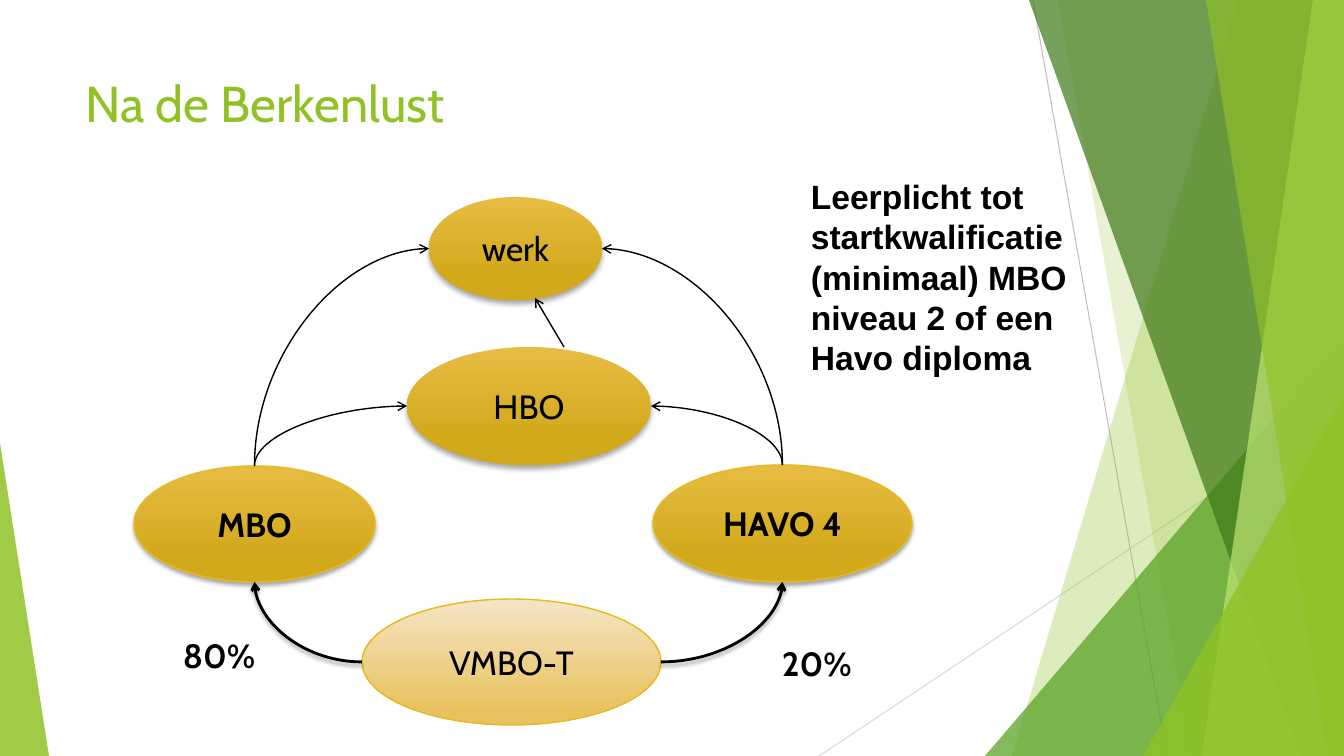
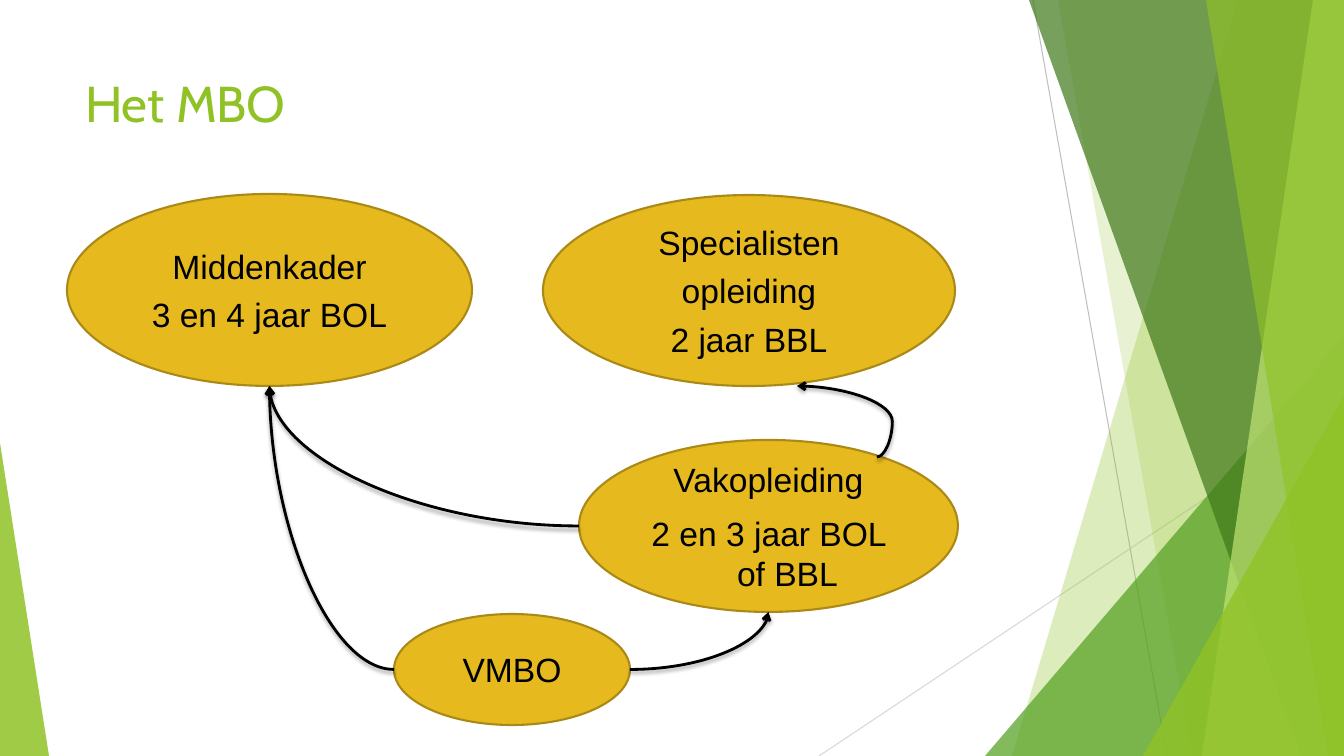
from lxml import etree
from pptx import Presentation
from pptx import util as u
from pptx.dml.color import RGBColor
from pptx.enum import shapes, text
from pptx.oxml.ns import qn

W, H = 1344, 756
GREEN, BLACK, GOLD = "90C226", "000000", "E6B91E"
TITLE_BOX = (75, 67, 948, 146)
TOP, LEFT, BOTTOM, RIGHT = range(4)

# Oval looks: fill is one colour or a list of (position, colour)
AMBER = [(0, "E7BC43"), (0.78, "D2A91B")]
RAISED = dict(fill=AMBER, shadow=(4, 3))
OUTLINED = dict(fill=AMBER, line=(GOLD, 1), shadow=(3, 2))
PALE = dict(fill=[(0, "F5E5C5"), (0.88, "E9C260")], line=(GOLD, 1))
FLAT = dict(fill=GOLD, line=("AA8916", 1.5))

# Arrow looks
THICK = dict(width=2, tip="tailEnd", shadow=(3, 2))
THIN_BACK = dict(width=1, tip="headEnd")
THIN = dict(width=1, tip="tailEnd")

# Side decoration, back to front
HAIRLINES = [(1033, 0, 1167, H, "BFBFBF"), (W, 406, 819, H, "D9D9D9")]
DECOR = [  # bands: (top x, bottom x); wedges: (box, apex)
    ((1238, 1012), GREEN, 30),
    ((1058, 1192), GREEN, 20),
    ((985, 336, 359, 420, 1), "54A021", 72),
    ((1029, 1301), "3F7819", 70),
    ((1313, 1202), "C0E474", 70),
    ((1206, 1328), GREEN, 65),
    ((1143, 396, 201, 360, 1), GREEN, 80),
    ((0, 443, 49, 313, 0), GREEN, 85),
]


def px(*values):
    return [u.Emu(round(v * 914400 / 100.8)) for v in values]


def rgb(color):
    return RGBColor.from_string(color)


def set_all(obj, **values):
    for name, value in values.items():
        setattr(obj, name, value)


def sub(parent, tag, **attrs):
    return etree.SubElement(parent, qn(tag), {k: str(v) for k, v in attrs.items()})


def set_alpha(color_el, percent):
    sub(color_el, "a:alpha", val=percent * 1000)


def set_shadow(sp, shadow):
    """Replace the theme shadow by none, or by a (blur, distance) one."""
    spPr = sp.element.spPr
    effects = spPr.find(qn("a:effectLst"))
    if effects is None:
        effects = sub(spPr, "a:effectLst")
    if shadow:
        blur, dist = (u.Pt(v) for v in shadow)
        outer = sub(effects, "a:outerShdw", blurRad=blur, dist=dist,
                    dir=5400000, rotWithShape=0)
        set_alpha(sub(outer, "a:srgbClr", val=BLACK), 35)


def set_paint(sp, fill, line=None, shadow=None):
    if isinstance(fill, str):
        sp.fill.solid()
        sp.fill.fore_color.rgb = rgb(fill)
    else:
        sp.fill.gradient()
        sp.fill.gradient_angle = 270
        for stop, (position, color) in zip(sp.fill.gradient_stops, fill):
            stop.position = position
            stop.color.rgb = rgb(color)
    if line:
        sp.line.color.rgb, sp.line.width = rgb(line[0]), u.Pt(line[1])
    else:
        sp.line.fill.background()
    sp.shadow.inherit = False
    set_shadow(sp, shadow)


def write(sp, lines, font, size=24, color=BLACK, bold=False, align="LEFT",
          anchor="TOP", before=None):
    """Fill a shape with paragraphs; a space before also brings a hanging indent."""
    tf = sp.text_frame
    set_all(tf, word_wrap=True, auto_size=text.MSO_AUTO_SIZE.NONE,
            vertical_anchor=text.MSO_ANCHOR[anchor])
    for i, line in enumerate(lines):
        p = tf.add_paragraph() if i else tf.paragraphs[0]
        p.alignment = text.PP_ALIGN[align]
        if before is not None:
            p.space_before = u.Pt(before)
            indent = px(38)[0]
            pPr = p._p.get_or_add_pPr()
            pPr.set("marL", str(indent))
            pPr.set("indent", str(-indent))
        r = p.add_run()
        r.text = line
        set_all(r.font, name=font, size=u.Pt(size), bold=bold)
        r.font.color.rgb = rgb(color)


def add_decor(s):
    """Draw hairlines, bands and wedges, then hand them to the slide's layout."""
    drawn = []
    for *ends, color in HAIRLINES:
        c = s.shapes.add_connector(shapes.MSO_CONNECTOR.STRAIGHT, *px(*ends))
        c.line.color.rgb, c.line.width = rgb(color), u.Pt(0.75)
        set_shadow(c, None)
        drawn.append(c)
    for geometry, color, opacity in DECOR:
        if len(geometry) == 2:
            top, bottom = geometry
            outline = s.shapes.build_freeform(*px(top, 0), scale=1)
            outline.add_line_segments([px(W, 0), px(W, H), px(bottom, H)])
            sp = outline.convert_to_shape()
        else:
            *box, apex = geometry
            sp = s.shapes.add_shape(shapes.MSO_SHAPE.ISOSCELES_TRIANGLE, *px(*box))
            sp.adjustments[0] = apex
        set_paint(sp, color)
        set_alpha(sp.element.spPr.find(qn("a:solidFill"))[0], opacity)
        drawn.append(sp)
    tree = s.slide_layout.shapes.element
    for n, sp in enumerate(drawn):
        sp.element.xpath(".//p:cNvPr")[0].set("id", str(100 + n))
        tree.insert(2 + n, sp.element)


def add_title(s, title):
    sp = s.shapes.title
    set_all(sp, **dict(zip(("left", "top", "width", "height"), px(*TITLE_BOX))))
    write(sp, [title], "Cabin", size=36, color=GREEN)


def add_oval(s, origin, box, lines, look, **style):
    x, y, w, h = box
    sp = s.shapes.add_shape(shapes.MSO_SHAPE.OVAL,
                            *px(origin[0] + x, origin[1] + y, w, h))
    set_paint(sp, **look)
    write(sp, lines, align="CENTER", anchor="MIDDLE", **style)
    return sp


def add_label(s, origin, box, label, font):
    x, y, w, h = box
    sp = s.shapes.add_textbox(*px(origin[0] + x, origin[1] + y, w, h))
    write(sp, [label], font, bold=True)


def finish_arrow(c, width, tip, shadow=None):
    c.line.color.rgb, c.line.width = rgb(BLACK), u.Pt(width)
    sub(c.element.spPr.find(qn("a:ln")), "a:" + tip, type="arrow")
    set_shadow(c, shadow)


def add_arc(s, start, end, look):
    """Join two ovals by a quarter curve that leaves the first one sideways."""
    c = s.shapes.add_connector(shapes.MSO_CONNECTOR.CURVE, 0, 0, 0, 0)
    c.begin_connect(*start)
    c.end_connect(*end)
    for tag, (_, side) in (("a:stCxn", start), ("a:endCxn", end)):
        # An oval has eight sites, two for each side
        c.element.find(".//" + qn(tag)).set("idx", str(2 * side))
    c.element.spPr.find(qn("a:prstGeom")).set("prst", "curvedConnector2")
    finish_arrow(c, **look)


def add_arrow(s, origin, ends, look, bend=None):
    """Free arrow: straight, or an S-curve when a bend is given."""
    kind = shapes.MSO_CONNECTOR.STRAIGHT if bend is None else shapes.MSO_CONNECTOR.CURVE
    c = s.shapes.add_connector(kind, *px(*(v + origin[i % 2] for i, v in enumerate(ends))))
    if bend is not None:
        guides = c.element.spPr.find(qn("a:prstGeom")).get_or_add_avLst()
        sub(guides, "a:gd", name="adj1", fmla=f"val {bend}")
    finish_arrow(c, **look)


def routes_diagram(s, origin):
    # Schools and work
    def oval(box, label, look, **style):
        return add_oval(s, origin, box, [label], look, font="Cabin", **style)

    mbo = oval((0, 295, 241, 116), "MBO", OUTLINED, bold=True, before=6)
    hbo = oval((273, 176, 244, 118), "HBO", RAISED)
    vmbo = oval((228, 428, 299, 126), "VMBO-T", PALE)
    havo = oval((519, 294, 259, 117), "HAVO 4", OUTLINED, bold=True, before=6)
    werk = oval((295, 26, 173, 103), "werk", RAISED)

    # Routes
    for school, side in ((mbo, LEFT), (havo, RIGHT)):
        add_arc(s, (vmbo, side), (school, BOTTOM), THICK)
        for goal in (hbo, werk):
            add_arc(s, (goal, side), (school, TOP), THIN_BACK)
    add_arrow(s, origin, (430, 176, 401, 127), THIN)

    # Remarks
    add_label(s, origin, (667, 0, 287, 214),
              "Leerplicht tot startkwalificatie (minimaal) MBO niveau 2 of een Havo diploma",
              "Arial")
    add_label(s, origin, (39, 459, 103, 50), "80%", "Cabin")
    add_label(s, origin, (638, 467, 103, 50), "20%", "Cabin")


def mbo_diagram(s, origin):
    # Courses
    def oval(box, *lines, **style):
        return add_oval(s, origin, box, lines, FLAT, font="Arial", **style)

    vak = oval((512, 246, 379, 172), "Vakopleiding", "2 en 3 jaar BOL of BBL", before=10)
    vmbo = oval((327, 420, 236, 111), "VMBO")
    kader = oval((0, 0, 405, 192), "Middenkader", "3 en 4 jaar BOL", before=6)
    oval((476, 1, 412, 191), "Specialisten", "opleiding", "2 jaar BBL", before=6)

    # Routes
    add_arc(s, (vmbo, LEFT), (kader, BOTTOM), THICK)
    add_arc(s, (vmbo, RIGHT), (vak, BOTTOM), THICK)
    add_arc(s, (vak, LEFT), (kader, BOTTOM), THICK)
    add_arrow(s, origin, (810, 263, 730, 192), THICK, bend=-19300)


def main():
    prs = Presentation()
    prs.slide_width, prs.slide_height = px(W, H)
    layout = prs.slide_layouts[5]
    pages = [("Na de Berkenlust", routes_diagram, (134, 171)),
             ("Het MBO", mbo_diagram, (67, 194))]
    for n, (title, diagram, origin) in enumerate(pages):
        s = prs.slides.add_slide(layout)
        if n == 0:
            add_decor(s)
        add_title(s, title)
        diagram(s, origin)
    prs.save("out.pptx")


if __name__ == "__main__":
    main()
